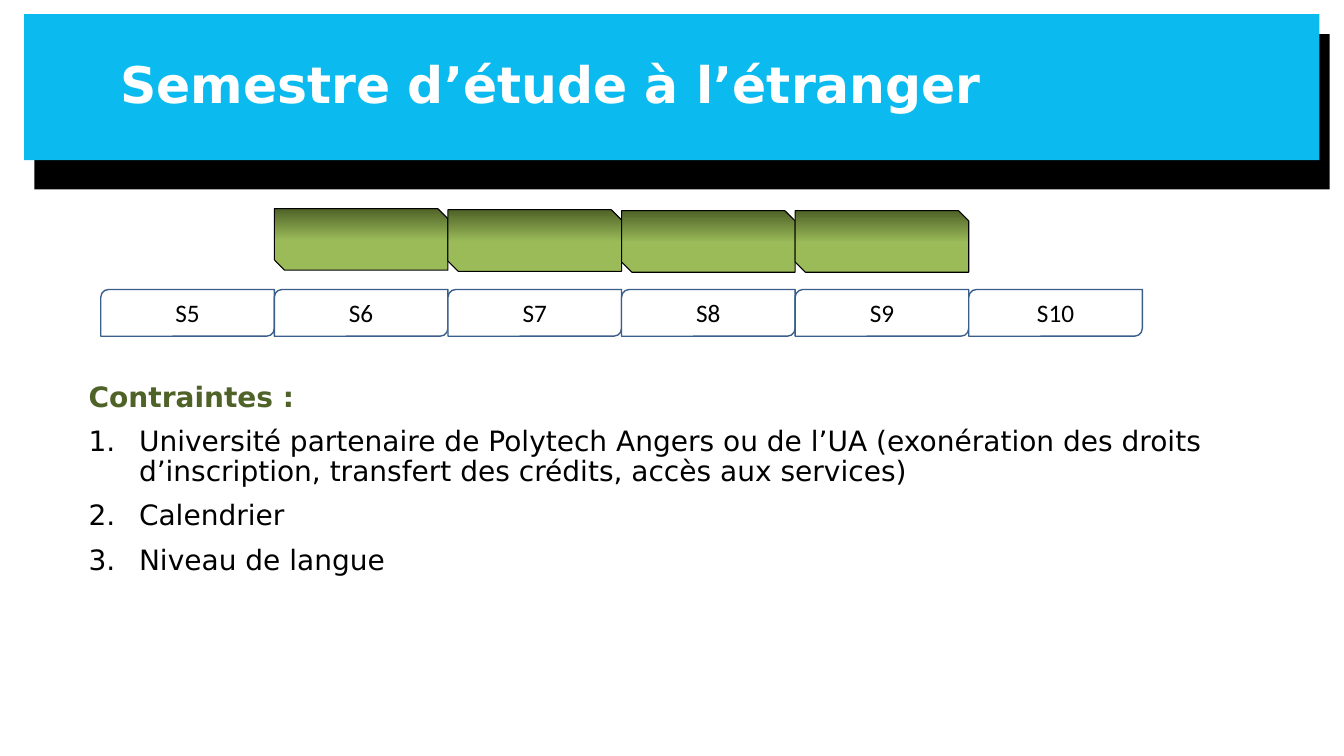
from copy import deepcopy

from lxml import etree
from pptx import Presentation
from pptx.dml.color import RGBColor
from pptx.enum import shapes, text
from pptx.oxml import ns
from pptx.util import Pt

HUES = {
    "black": "000000",
    "white": "FFFFFF",
    "sky": "0BBBEF",
    "edge": "3A5F8C",
    "lime": "9BBB59",
    "olive": "4F6228",
}
SANS = "DejaVu Sans"
LEFT, STEP = 72, 124  # start and width of one semester

TERMS = ["S5", "S6", "S7", "S8", "S9", "S10"]
TOPS = [149, 149.8, 150.5, 150.5]  # green blocks above S6 to S9
LIMITS = [
    "Université partenaire de Polytech Angers ou de l’UA (exonération des droits "
    "d’inscription, transfert des crédits, accès aux services)",
    "Calendrier",
    "Niveau de langue",
]


def hue(name):
    return RGBColor.from_string(HUES[name])


def style(par, name, size, color, bold=False):
    font = par.font
    font.name, font.size, font.bold = name, Pt(size), bold
    font.color.rgb = hue(color)


def block(slide, kind, box, fill=None, line=None, width=1):
    shape = slide.shapes.add_shape(kind, *[Pt(n) for n in box])
    shape.shadow.inherit = False
    if fill:
        shape.fill.solid()
        shape.fill.fore_color.rgb = hue(fill)
    if line:
        shape.line.color.rgb = hue(line)
        shape.line.width = Pt(width)
    else:
        shape.line.fill.background()
    return shape


def shade(shape):
    """Green from the bottom to the middle, then darker to the top."""
    fill = shape.fill
    fill.gradient()
    fill.gradient_angle = 90
    for stop, color in zip(fill.gradient_stops, ["lime", "olive"]):
        stop.color.rgb = hue(color)
    first, last = shape._element.spPr.findall(".//" + ns.qn("a:gs"))
    first.set("pos", "0")
    last.set("pos", "100000")
    middle = deepcopy(first)
    middle.set("pos", "48000")
    first.addnext(middle)


def number(par):
    props = par._p.get_or_add_pPr()
    props.set("marL", str(Pt(36)))
    props.set("indent", str(-Pt(36)))
    etree.SubElement(props, ns.qn("a:buFont"), typeface="+mj-lt")
    etree.SubElement(props, ns.qn("a:buAutoNum"), type="arabicPeriod")


def header(slide):
    rect = shapes.MSO_SHAPE.RECTANGLE
    block(slide, rect, (24.5, 24.5, 925.2, 110.9), "black")
    block(slide, rect, (17.3, 10, 925.2, 104.4), "sky")
    title = slide.shapes.title
    slide.shapes._spTree.append(title._element)  # in front of the bands
    title.left, title.top = Pt(66.2), Pt(10)
    title.width, title.height = Pt(828), Pt(104.4)
    frame = title.text_frame
    frame.text = "Semestre d’étude à l’étranger"
    frame.margin_left = Pt(19.7)
    frame.vertical_anchor = text.MSO_ANCHOR.MIDDLE
    par = frame.paragraphs[0]
    par.alignment = text.PP_ALIGN.LEFT
    par.line_spacing = 0.9
    style(par, SANS, 36, "white", True)


def limits(slide):
    box = slide.shapes.add_textbox(Pt(56.2), Pt(270), Pt(838), Pt(213))
    frame = box.text_frame
    frame.word_wrap = True
    head = frame.paragraphs[0]
    head.text = "Contraintes :"
    head.line_spacing = 0.9
    style(head, SANS, 20, "olive", True)
    for limit in LIMITS:
        par = frame.add_paragraph()
        par.text = limit
        par.line_spacing = 0.9
        par.space_before = Pt(10)
        number(par)
        style(par, SANS, 20, "black")


def terms(slide):
    kind = shapes.MSO_SHAPE.ROUND_2_DIAG_RECTANGLE
    for i, term in enumerate(TERMS):
        box = (LEFT + i * STEP, 206.8, STEP, 33.4)
        shape = block(slide, kind, box, "white", "edge")
        frame = shape.text_frame
        frame.text = term
        frame.vertical_anchor = text.MSO_ANCHOR.MIDDLE
        par = frame.paragraphs[0]
        par.alignment = text.PP_ALIGN.CENTER
        style(par, "Calibri", 18, "black")


def stays(slide):
    kind = shapes.MSO_SHAPE.SNIP_2_DIAG_RECTANGLE
    for i, top in enumerate(TOPS, 1):
        box = (LEFT + i * STEP, top, STEP, 44)
        shade(block(slide, kind, box, line="black", width=0.75))


def main():
    deck = Presentation()
    deck.slide_width, deck.slide_height = Pt(960), Pt(540)
    slide = deck.slides.add_slide(deck.slide_layouts[5])
    # Title band
    header(slide)
    # Conditions
    limits(slide)
    # Semester row and possible stays abroad
    terms(slide)
    stays(slide)
    deck.save("out.pptx")


if __name__ == "__main__":
    main()
